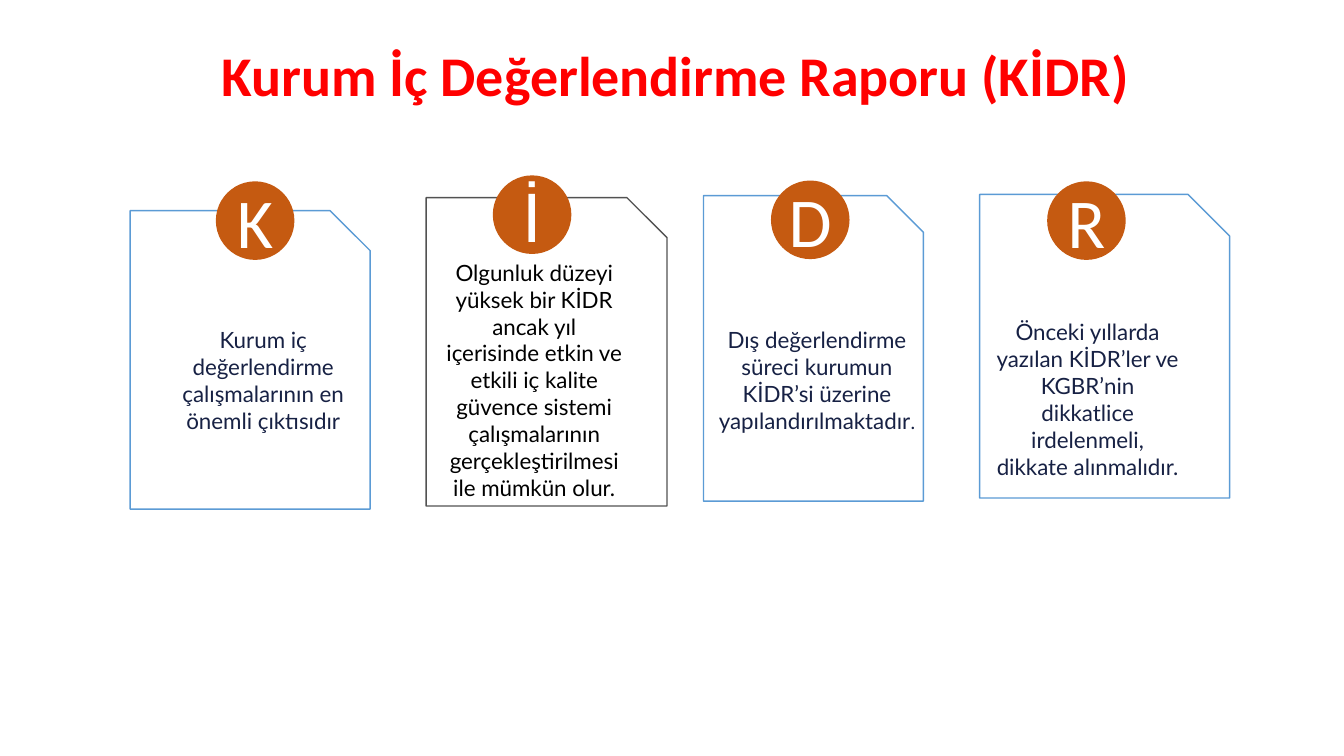
from typing import NamedTuple

from pptx import Presentation
from pptx.dml.color import RGBColor
from pptx.enum.shapes import MSO_SHAPE as Shape
from pptx.enum.text import MSO_ANCHOR as Anchor, PP_ALIGN as Align
from pptx.util import Cm, Pt

RED = RGBColor(0xFF, 0x00, 0x00)
BLUE = RGBColor(0x5B, 0x9B, 0xD5)
GRAY = RGBColor(0x52, 0x52, 0x52)
RUST = RGBColor(0xC5, 0x5A, 0x11)
NAVY = RGBColor(0x17, 0x21, 0x44)
BLACK = RGBColor(0x00, 0x00, 0x00)
WHITE = RGBColor(0xFF, 0xFF, 0xFF)

DISC = 1.98


class Box(NamedTuple):
    left: float
    top: float
    width: float
    height: float

    def cm(self) -> list:
        return [Cm(size) for size in self]


class Card(NamedTuple):
    mark: str
    text: str
    sheet: Box
    body: Box
    disc: Box
    edge: RGBColor = BLUE
    ink: RGBColor = NAVY
    face: str = "Calibri"
    tail: str = ""


CARDS = [
    Card("K", "Kurum iç değerlendirme çalışmalarının en önemli çıktısıdır",
         Box(3.28, 5.31, 6.05, 7.52), Box(4.17, 8.1, 4.93, 3),
         Box(5.44, 4.57, DISC, DISC)),
    Card("İ", "Olgunluk düzeyi yüksek bir KİDR ancak yıl içerisinde etkin "
         "ve etkili iç kalite güvence sistemi çalışmalarının "
         "gerçekleştirilmesi ile mümkün olur.",
         Box(10.74, 4.98, 6.07, 7.77), Box(11, 6.4, 4.93, 6.4),
         Box(12.42, 4.42, DISC, DISC), GRAY, BLACK, "Arial"),
    Card("D", "Dış değerlendirme süreci kurumun KİDR’si üzerine "
         "yapılandırılmaktadır",
         Box(17.73, 4.93, 5.54, 7.7), Box(17.73, 8.1, 5.72, 3),
         Box(19.43, 4.55, DISC, DISC), tail="."),
    Card("R", "Önceki yıllarda yazılan KİDR’ler ve KGBR’nin dikkatlice "
         "irdelenmeli, dikkate alınmalıdır.",
         Box(24.69, 4.9, 6.3, 7.65), Box(24.77, 7.9, 5.28, 4.37),
         Box(26.39, 4.57, DISC, DISC)),
]


def style(para, face: str, size: int, ink: RGBColor, bold: bool = False) -> None:
    para.alignment = Align.CENTER
    font = para.font
    font.name, font.size, font.bold = face, Pt(size), bold
    font.color.rgb = ink


def write(slide, box: Box, text: str, face: str, size: int,
          ink: RGBColor, bold: bool = False):
    frame = slide.shapes.add_textbox(*box.cm()).text_frame
    frame.word_wrap = True
    para = frame.paragraphs[0]
    para.add_run().text = text
    style(para, face, size, ink, bold)
    return para


def draw(slide, card: Card) -> None:
    sheet = slide.shapes.add_shape(Shape.SNIP_1_RECTANGLE, *card.sheet.cm())
    sheet.shadow.inherit = False
    sheet.fill.background()
    sheet.line.color.rgb = card.edge
    sheet.line.width = Pt(1)

    para = write(slide, card.body, card.text, "Lato", 16, card.ink)
    if card.tail:
        run = para.add_run()
        run.text = card.tail
        run.font.size = Pt(14)

    disc = slide.shapes.add_shape(Shape.OVAL, *card.disc.cm())
    disc.shadow.inherit = False
    disc.fill.solid()
    disc.fill.fore_color.rgb = RUST
    disc.line.fill.background()
    frame = disc.text_frame
    frame.word_wrap = False
    frame.vertical_anchor = Anchor.MIDDLE
    frame.margin_left = frame.margin_right = 0
    frame.margin_top = frame.margin_bottom = 0
    frame.text = card.mark
    style(frame.paragraphs[0], card.face, 50, WHITE)


def main() -> None:
    deck = Presentation()
    deck.slide_width, deck.slide_height = Cm(33.87), Cm(19.05)
    slide = deck.slides.add_slide(deck.slide_layouts[6])
    write(slide, Box(4.42, 0.89, 25.2, 1.96),
          "Kurum İç Değerlendirme Raporu (KİDR)", "Calibri", 40, RED, True)
    for card in CARDS:
        draw(slide, card)
    deck.save("out.pptx")


if __name__ == "__main__":
    main()
